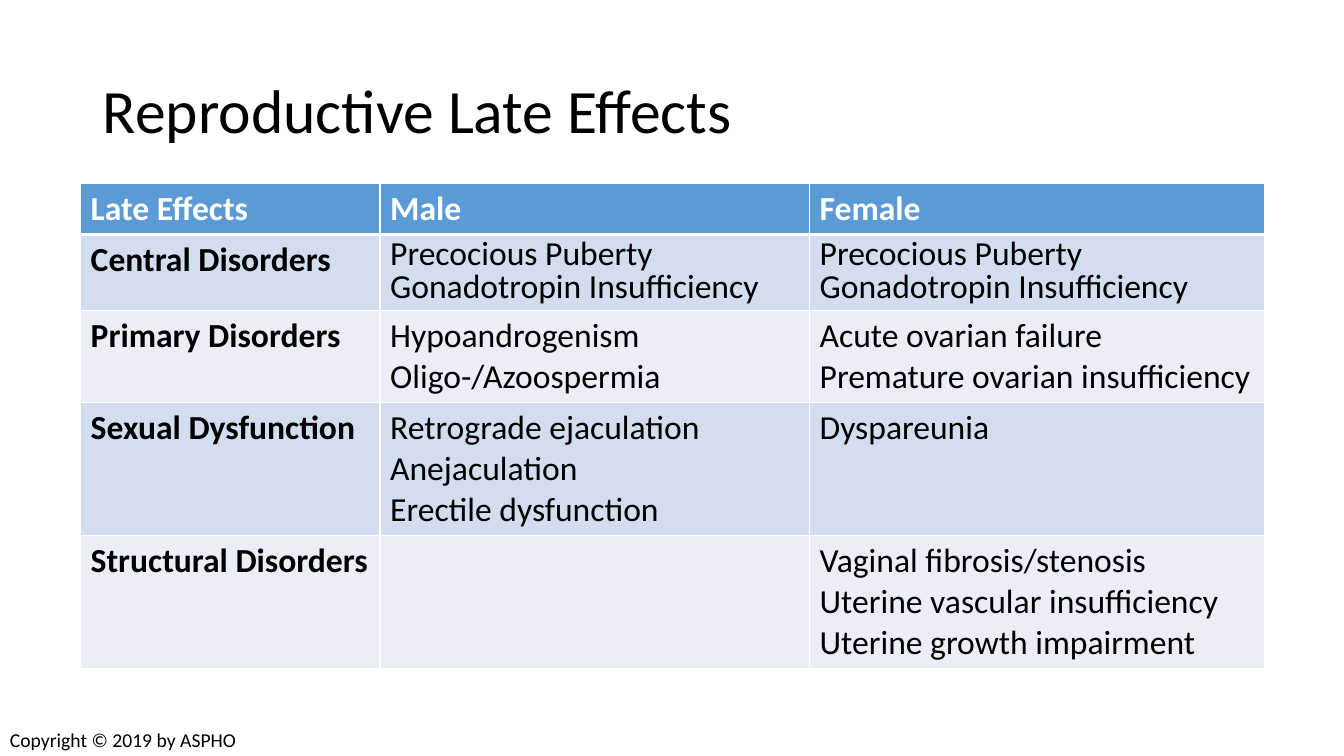
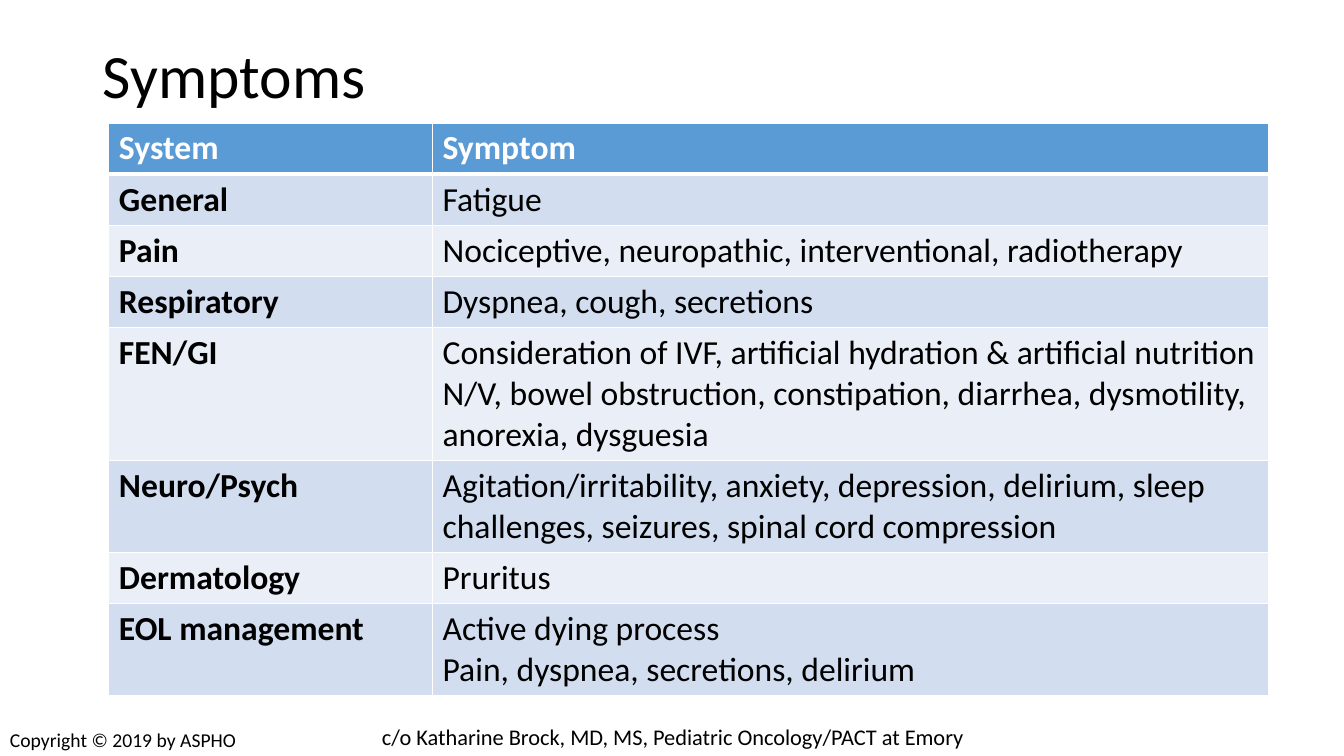
from lxml.etree import SubElement
from pptx import Presentation
from pptx.dml.color import RGBColor
from pptx.enum.text import MSO_ANCHOR, MSO_AUTO_SIZE, PP_ALIGN
from pptx.oxml.ns import qn
from pptx.util import Inches, Pt

COLOURS = {
    "text": "000000",
    "white": "FFFFFF",
    "header": "5B9BD5",
    "odd": "D2DEEF",
    "even": "EAEFF7",
}
FONT = "Calibri"
TITLE_BOX = (0.92, 0.4, 11.5, 1.45)
COPYRIGHT = ("Copyright © 2019 by ASPHO", (0, 7.17, 2.48, 0.34), 14)
LINE_HEIGHT, CELL_MARGINS = 0.4, 0.1

SLIDES = [
    {
        "title": "Reproductive Late Effects",
        "anchor": MSO_ANCHOR.MIDDLE,
        "corner": (0.8, 1.82),
        "columns": (2.97, 4.26, 4.51),
        "rows": [
            ("Late Effects", "Male", "Female"),
            ("Central Disorders",
             "Precocious Puberty\nGonadotropin Insufficiency",
             "Precocious Puberty\nGonadotropin Insufficiency"),
            ("Primary Disorders",
             "Hypoandrogenism\nOligo-/Azoospermia",
             "Acute ovarian failure\nPremature ovarian insufficiency"),
            ("Sexual Dysfunction",
             "Retrograde ejaculation\nAnejaculation\nErectile dysfunction",
             "Dyspareunia"),
            ("Structural Disorders", "",
             "Vaginal fibrosis/stenosis\nUterine vascular insufficiency\n"
             "Uterine growth impairment"),
        ],
        "lines": (1, 2, 2, 3, 3),
        "tight_row": 1,
        "notes": [],
    },
    {
        "title": "Symptoms",
        "anchor": MSO_ANCHOR.TOP,
        "corner": (1.08, 1.22),
        "columns": (3.21, 8.29),
        "rows": [
            ("System", "Symptom"),
            ("General", "Fatigue"),
            ("Pain", "Nociceptive, neuropathic, interventional, radiotherapy"),
            ("Respiratory", "Dyspnea, cough, secretions"),
            ("FEN/GI",
             "Consideration of IVF, artificial hydration & artificial nutrition\n"
             "N/V, bowel obstruction, constipation, diarrhea, dysmotility, "
             "anorexia, dysguesia"),
            ("Neuro/Psych",
             "Agitation/irritability, anxiety, depression, delirium, sleep "
             "challenges, seizures, spinal cord compression"),
            ("Dermatology", "Pruritus"),
            ("EOL management",
             "Active dying process\nPain, dyspnea, secretions, delirium"),
        ],
        "lines": (1, 1, 1, 1, 3, 2, 1, 2),
        "tight_row": None,
        "notes": [("c/o Katharine Brock, MD, MS, Pediatric Oncology/PACT at Emory",
                   (3.69, 7.13, 6.6, 0.37), 16)],
    },
]


def colour(name):
    return RGBColor.from_string(COLOURS[name])


def style(paragraph, size, colour_name="text", bold=False):
    font = paragraph.font
    font.name, font.size, font.bold = FONT, Pt(size), bold
    font.color.rgb = colour(colour_name)


def set_title(slide, text, anchor):
    title = slide.shapes.title
    title.left, title.top, title.width, title.height = map(Inches, TITLE_BOX)
    frame = title.text_frame
    frame.text = text
    frame.auto_size = MSO_AUTO_SIZE.NONE
    frame.vertical_anchor = anchor
    paragraph = frame.paragraphs[0]
    paragraph.alignment = PP_ALIGN.LEFT
    paragraph.line_spacing = 0.9
    style(paragraph, 44)


def add_note(slide, text, box, size):
    frame = slide.shapes.add_textbox(*map(Inches, box)).text_frame
    frame.word_wrap = True
    frame.text = text
    style(frame.paragraphs[0], size)


def set_borders(cell, top, bottom):
    properties = cell._tc.get_or_add_tcPr()
    for side, width in (("L", 1), ("R", 1), ("T", top), ("B", bottom)):
        line = SubElement(properties, qn(f"a:ln{side}"), w=str(Pt(width)))
        fill = SubElement(line, qn("a:solidFill"))
        SubElement(fill, qn("a:srgbClr"), val=COLOURS["white"])


def fill_cell(cell, text, row, column, spacing):
    set_borders(cell, 3 if row == 1 else 1, 3 if row == 0 else 1)
    cell.fill.solid()
    cell.fill.fore_color.rgb = colour("header" if row == 0 else "odd" if row % 2 else "even")
    cell.text = text
    for paragraph in cell.text_frame.paragraphs:
        if column > 0:
            paragraph.line_spacing = spacing
        style(paragraph, 24, "text" if row else "white", row == 0 or column == 0)


def add_grid(slide, content):
    rows, columns = content["rows"], content["columns"]
    spacings = [0.8 if row == content["tight_row"] else 1.0 for row in range(len(rows))]
    heights = [CELL_MARGINS + LINE_HEIGHT * count * spacing
               for count, spacing in zip(content["lines"], spacings)]
    box = (*content["corner"], sum(columns), sum(heights))
    table = slide.shapes.add_table(len(rows), len(columns), *map(Inches, box)).table
    for column, width in zip(table.columns, columns):
        column.width = Inches(width)
    for row, texts in enumerate(rows):
        table.rows[row].height = Inches(heights[row])
        for column, text in enumerate(texts):
            fill_cell(table.cell(row, column), text, row, column, spacings[row])


def main():
    presentation = Presentation()
    presentation.slide_width, presentation.slide_height = Inches(13.33), Inches(7.5)
    title_only = presentation.slide_layouts[5]
    for content in SLIDES:
        slide = presentation.slides.add_slide(title_only)
        set_title(slide, content["title"], content["anchor"])
        add_grid(slide, content)
        for note in [*content["notes"], COPYRIGHT]:
            add_note(slide, *note)
    presentation.save("out.pptx")


if __name__ == "__main__":
    main()
